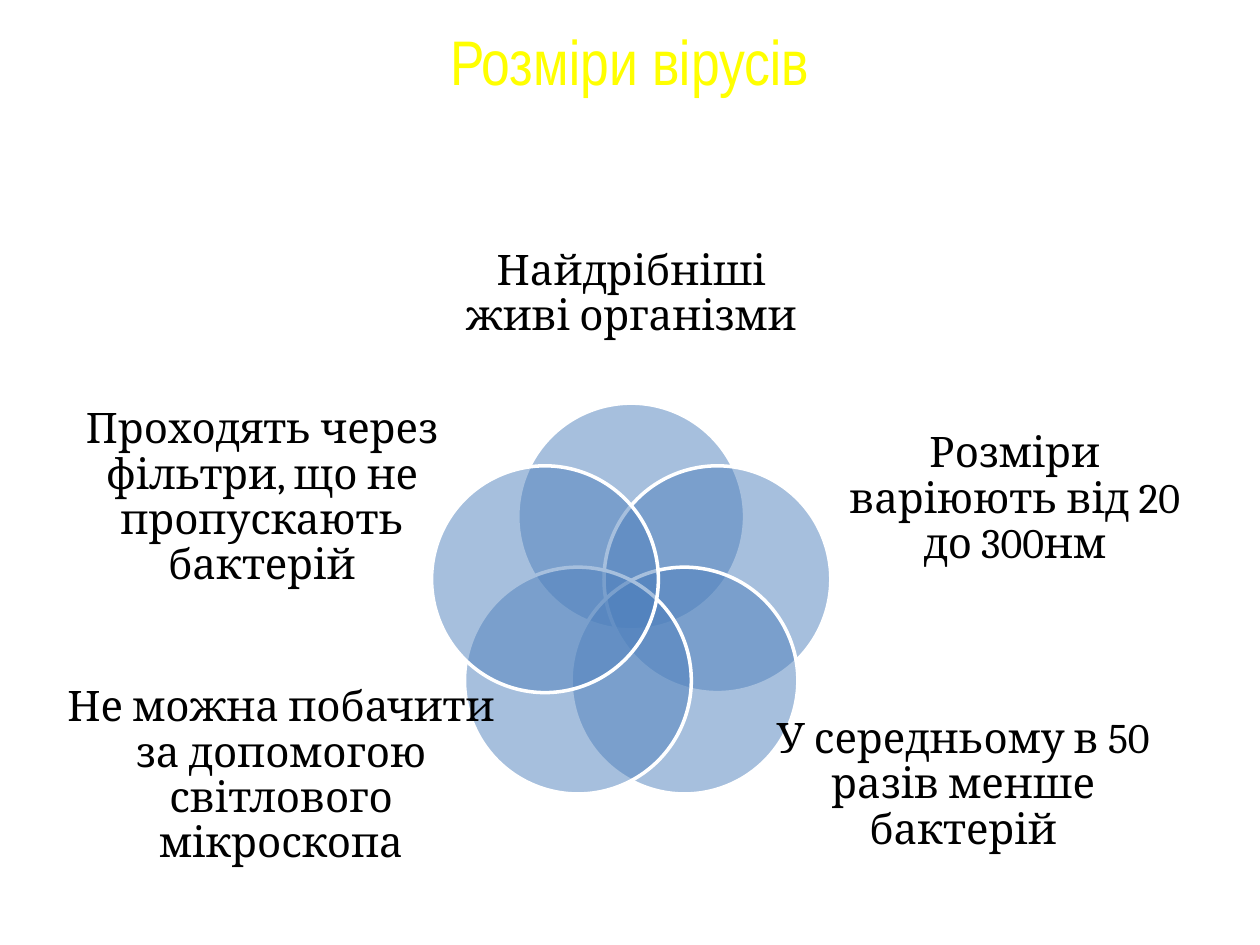
"""Build a slide on virus sizes with five overlapping circles and labels."""
from dataclasses import dataclass
from math import cos, radians, sin

from lxml.etree import SubElement
from pptx import Presentation
from pptx.dml.color import RGBColor
from pptx.enum.shapes import MSO_SHAPE
from pptx.enum.text import MSO_ANCHOR, PP_ALIGN
from pptx.oxml.ns import qn
from pptx.slide import Slide
from pptx.util import Pt

COLORS = {"petal": "4F81BD", "outline": "FFFFFF", "label": "000000", "title": "FFFF00"}
CENTER_X, CENTER_Y = 360.7, 347
ORBIT, DIAMETER = 51.8, 129.6


@dataclass
class Run:
    text: str
    size: float = 24
    font: str = "Cambria"
    color: str = "label"


@dataclass
class Petal:
    left: float
    top: float
    width: float
    height: float
    runs: list[Run]


PETALS = [
    Petal(254.2, 124.6, 213.1, 87.1, [Run("Найдрібніші живі організми")]),
    Petal(476.6, 232.6, 206.6, 105.8, [
        Run("Розміри"), Run(" ", 16, "Calibri"), Run("варіюють від 20 до 300нм")]),
    Petal(433.4, 406.1, 234, 85, [Run("У середньому в 50 разів менше бактерій")]),
    Petal(31, 388.8, 259.2, 109.4, [Run("Не можна побачити за допомогою світлового мікроскопа")]),
    Petal(39.6, 237.6, 220.3, 94.3, [Run("Проходять через фільтри, що не пропускають бактерій")]),
]


def add_runs(paragraph, runs: list[Run]) -> None:
    paragraph.alignment = PP_ALIGN.CENTER
    for item in runs:
        run = paragraph.add_run()
        run.text = item.text
        run.font.size = Pt(item.size)
        run.font.name = item.font
        run.font.color.rgb = RGBColor.from_string(COLORS[item.color])


def add_circle(slide: Slide, angle: float) -> None:
    left = CENTER_X + ORBIT * sin(radians(angle)) - DIAMETER / 2
    top = CENTER_Y - ORBIT * cos(radians(angle)) - DIAMETER / 2
    shape = slide.shapes.add_shape(
        MSO_SHAPE.OVAL, Pt(left), Pt(top), Pt(DIAMETER), Pt(DIAMETER))
    shape.shadow.inherit = False
    shape.fill.solid()
    shape.fill.fore_color.rgb = RGBColor.from_string(COLORS["petal"])
    color = shape.element.spPr.find(qn("a:solidFill")).find(qn("a:srgbClr"))
    SubElement(color, qn("a:alpha"), val="50000")
    shape.line.color.rgb = RGBColor.from_string(COLORS["outline"])
    shape.line.width = Pt(2)


def add_label(slide: Slide, petal: Petal) -> None:
    shape = slide.shapes.add_textbox(
        Pt(petal.left), Pt(petal.top), Pt(petal.width), Pt(petal.height))
    frame = shape.text_frame
    frame.word_wrap = True
    frame.vertical_anchor = MSO_ANCHOR.MIDDLE
    frame.margin_left = frame.margin_right = frame.margin_top = frame.margin_bottom = 0
    paragraph = frame.paragraphs[0]
    paragraph.line_spacing = 0.9
    add_runs(paragraph, petal.runs)


def add_title(slide: Slide) -> None:
    title = slide.shapes.title
    title.left, title.top, title.width, title.height = Pt(48.2), Pt(9.4), Pt(623.5), Pt(85)
    title.text_frame.word_wrap = False
    title.text_frame.vertical_anchor = MSO_ANCHOR.TOP
    add_runs(title.text_frame.paragraphs[0],
             [Run("Розміри вірусів", 36, "Arial Narrow", "title")])


def main() -> None:
    presentation = Presentation()
    presentation.slide_width, presentation.slide_height = Pt(720), Pt(540)
    slide = presentation.slides.add_slide(presentation.slide_layouts.get_by_name("Title Only"))
    for index, petal in enumerate(PETALS):
        add_circle(slide, index * 360 / len(PETALS))
        add_label(slide, petal)
    add_title(slide)
    presentation.save("out.pptx")


if __name__ == "__main__":
    main()
